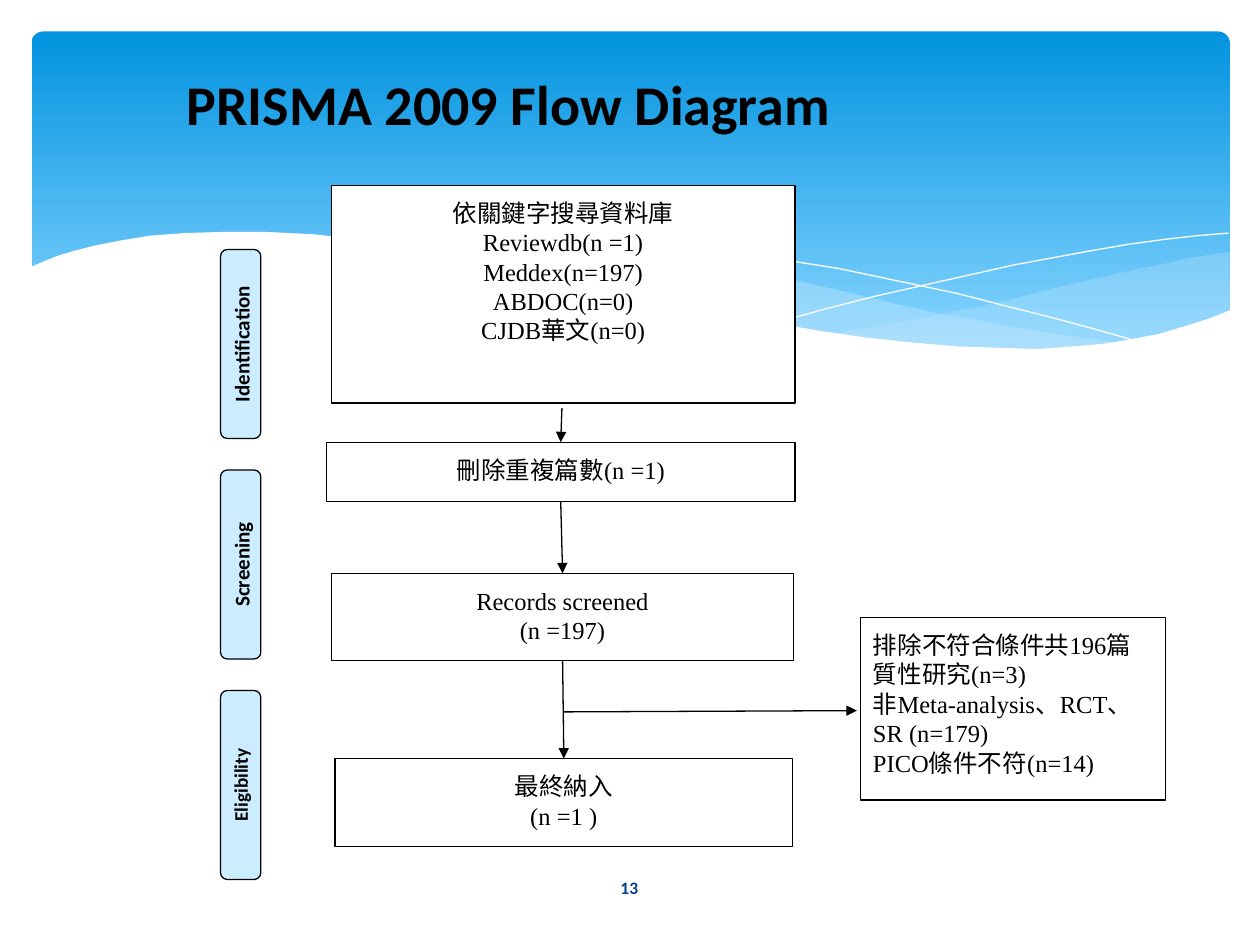
from dataclasses import dataclass

from lxml.etree import SubElement
from pptx import Presentation
from pptx.dml.color import RGBColor as Rgb
from pptx.enum.shapes import MSO_CONNECTOR as Link, MSO_SHAPE as Kind
from pptx.enum.text import MSO_ANCHOR as Anchor, MSO_AUTO_SIZE as Fit, PP_ALIGN as Align
from pptx.oxml.ns import qn
from pptx.util import Pt

PX = 9144  # EMU in one px, 100 px to the inch


@dataclass(frozen=True)
class Theme:
    sans: str = "Calibri"
    serif: str = "Times New Roman"
    ink: Rgb = Rgb(0, 0, 0)
    white: Rgb = Rgb(255, 255, 255)
    sky: Rgb = Rgb(0x02, 0x93, 0xE0)
    haze: Rgb = Rgb(0x83, 0xD3, 0xFE)
    foam: Rgb = Rgb(0xC6, 0xE7, 0xFC)
    tab: Rgb = Rgb(0xCC, 0xEC, 0xFF)
    navy: Rgb = Rgb(0x07, 0x3E, 0x87)
    title: int = 32
    body: int = 14
    page: int = 10
    edge: float = 0.75


@dataclass(frozen=True)
class Box:
    x: int
    y: int
    w: int
    h: int

    def emu(self):
        return [v * PX for v in (self.x, self.y, self.w, self.h)]


THEME = Theme()

# Wave outlines, in px from the corner of the banner
SWELL = [(975, 200), (948, 204), (921, 210), (891, 216), (861, 223), (832, 230),
         (805, 237), (779, 243), (753, 248), (729, 253), (706, 257), (661, 265),
         (691, 269), (718, 273), (745, 275), (769, 277), (803, 278), (835, 277),
         (863, 275), (889, 272), (913, 267), (935, 262), (949, 257), (963, 252),
         (976, 247), (976, 200)]
CREST = [(893, 273), (866, 269), (837, 265), (807, 260), (775, 254), (741, 248),
         (706, 240), (668, 231), (629, 222), (598, 214), (569, 208), (541, 203),
         (514, 198), (489, 194), (464, 191), (441, 189), (420, 187), (399, 186),
         (361, 186), (328, 187), (299, 189), (286, 191), (323, 196), (362, 203),
         (404, 211), (449, 222), (491, 232), (530, 240), (566, 248), (601, 255),
         (634, 261), (665, 266), (695, 270), (722, 274), (748, 276), (773, 278),
         (796, 279), (818, 279), (848, 278), (876, 275)]
FALL = [(309, 195), (328, 192), (353, 189), (374, 188), (401, 187), (433, 187),
        (469, 189), (510, 192), (556, 197), (608, 204), (665, 213), (727, 226),
        (760, 233), (795, 242), (831, 251), (868, 261), (907, 272)]
RISE = [(613, 257), (652, 246), (695, 235), (748, 223), (806, 210), (866, 199),
        (895, 194), (924, 190), (951, 187), (975, 185)]
SHORE = [(977, 246), (959, 253), (940, 259), (920, 265), (899, 269), (875, 273),
         (850, 275), (823, 277), (793, 276), (761, 275), (726, 272), (688, 268),
         (647, 262), (603, 254), (555, 245), (503, 233), (447, 220), (391, 207),
         (339, 197), (292, 191), (250, 186), (211, 184), (177, 184), (146, 185),
         (119, 187), (95, 191), (75, 195), (59, 199), (46, 203), (36, 207),
         (24, 212), (23, 213), (23, 329), (977, 329)]


def style(shape, fill, line=None):
    shape.shadow.inherit = False
    shape.fill.solid()
    shape.fill.fore_color.rgb = fill
    if line is None:
        shape.line.fill.background()
    else:
        shape.line.color.rgb = line
        shape.line.width = Pt(THEME.edge)


def write(shape, lines, face, size, color=THEME.ink, bold=False,
          align=Align.CENTER, anchor=Anchor.TOP, inset=10):
    frame = shape.text_frame
    frame.word_wrap = True
    frame.auto_size = Fit.NONE
    frame.vertical_anchor = anchor
    frame.margin_left = frame.margin_right = inset * PX
    frame.margin_top = frame.margin_bottom = min(inset, 10) * PX
    frame.text = "\n".join(lines)
    for para in frame.paragraphs:
        para.alignment = align
        font = para.font
        font.name, font.size, font.bold = face, Pt(size), bold
        font.color.rgb = color


def trace(slide, box, points, closed):
    pen = slide.shapes.build_freeform(*points[0], scale=PX)
    pen.add_line_segments(points[1:], close=closed)
    return pen.convert_to_shape(box.x * PX, box.y * PX)


def banner(slide, box):
    """Gradient panel whose lower edge is cut by waves."""
    inner = Box(box.x + 25, box.y + 25, box.w - 49, box.h - 59)
    panel = slide.shapes.add_shape(Kind.ROUNDED_RECTANGLE, *inner.emu())
    panel.adjustments[0] = 0.034
    style(panel, THEME.sky)
    panel.fill.gradient()
    panel.fill.gradient_angle = 270
    stops = panel.fill.gradient_stops
    for stop, color, spot in zip(stops, (THEME.sky, THEME.haze), (0, 0.9)):
        stop.color.rgb, stop.position = color, spot

    for points, alpha in ((SWELL, 29), (CREST, 40)):
        wave = trace(slide, box, points, True)
        style(wave, THEME.foam)
        tint = wave.fill._xPr.find(".//" + qn("a:srgbClr"))
        SubElement(tint, qn("a:alpha"), val=str(alpha * 1000))
    for points in (FALL, RISE):
        curve = trace(slide, box, points, False)
        style(curve, THEME.white, THEME.white)
        curve.fill.background()
        curve.line.width = 0
    style(trace(slide, box, SHORE, True), THEME.white)


def heading(slide, box, text):
    title = slide.shapes.title
    title.left, title.top, title.width, title.height = box.emu()
    write(title, [text], THEME.sans, THEME.title, bold=True,
          align=Align.LEFT, anchor=Anchor.MIDDLE)
    slide.shapes._spTree.append(title._element)  # in front of the banner


def number(slide, box, text):
    note = slide.shapes.add_textbox(*box.emu())
    write(note, [text], THEME.sans, THEME.page, THEME.navy, True,
          anchor=Anchor.MIDDLE)


def stages(slide, box, names):
    """Column of upright tabs, each six sevenths of its step long."""
    step = box.h // len(names)
    size = step * 6 // 7
    for i, (name, points) in enumerate(names):
        mid = box.y + i * step + size // 2
        flat = Box(box.x + (box.w - size) // 2, mid - box.w // 2, size, box.w)
        tab = slide.shapes.add_shape(Kind.ROUNDED_RECTANGLE, *flat.emu())
        tab.rotation = 270
        style(tab, THEME.tab, THEME.ink)
        write(tab, [name], THEME.sans, points, bold=True, inset=5)


def card(slide, box, lines, align=Align.CENTER):
    rect = slide.shapes.add_shape(Kind.RECTANGLE, *box.emu())
    style(rect, THEME.white, THEME.ink)
    write(rect, lines, THEME.serif, THEME.body, align=align)
    return rect


def arrow(slide, start=(0, 0), end=(0, 0), source=None, target=None):
    """Arrow between points, or from a card's foot to a card's top."""
    ends = [v * PX for v in (*start, *end)]
    link = slide.shapes.add_connector(Link.STRAIGHT, *ends)
    if source is not None:
        link.begin_connect(source, 2)
    if target is not None:
        link.end_connect(target, 0)
    link.line.color.rgb = THEME.ink
    link.line.width = Pt(THEME.edge)
    SubElement(link.line._get_or_add_ln(), qn("a:tailEnd"), type="triangle")
    SubElement(link._element.spPr, qn("a:effectLst"))


def flow(slide, box):
    def part(x, y, w, h):
        return Box(box.x + x, box.y + y, w, h)

    def spot(x, y):
        return box.x + x, box.y + y

    card(slide, part(4, 0, 368, 173), [
        "依關鍵字搜尋資料庫", "Reviewdb(n =1)", "Meddex(n=197)",
        "ABDOC(n=0)", "CJDB華文(n=0)"])
    unique = card(slide, part(0, 204, 372, 47), ["刪除重複篇數(n =1)"])
    screen = card(slide, part(4, 308, 367, 69), ["Records screened\v(n =197)"])
    card(slide, part(424, 343, 242, 145), [
        "排除不符合條件共196篇", "質性研究(n=3)",
        "非Meta-analysis、RCT、SR (n=179)", "PICO條件不符(n=14)"], Align.LEFT)
    final = card(slide, part(7, 455, 363, 70), ["最終納入", "(n =1 )"])

    arrow(slide, start=spot(187, 177), target=unique)
    arrow(slide, source=unique, target=screen)
    arrow(slide, source=screen, target=final)
    arrow(slide, spot(188, 418), spot(421, 417))


def main():
    deck = Presentation()
    deck.slide_width, deck.slide_height = 1000 * PX, 750 * PX
    slide = deck.slides.add_slide(deck.slide_layouts[5])
    banner(slide, Box(0, 0, 1000, 329))
    number(slide, Box(436, 684, 127, 40), "13")
    heading(slide, Box(138, 50, 796, 64), "PRISMA 2009 Flow Diagram")
    stages(slide, Box(175, 198, 32, 525),
           [("Identification", 12), ("Screening", 12), ("Eligibility", 11)])
    flow(slide, Box(259, 147, 666, 525))
    deck.save("out.pptx")


if __name__ == "__main__":
    main()
